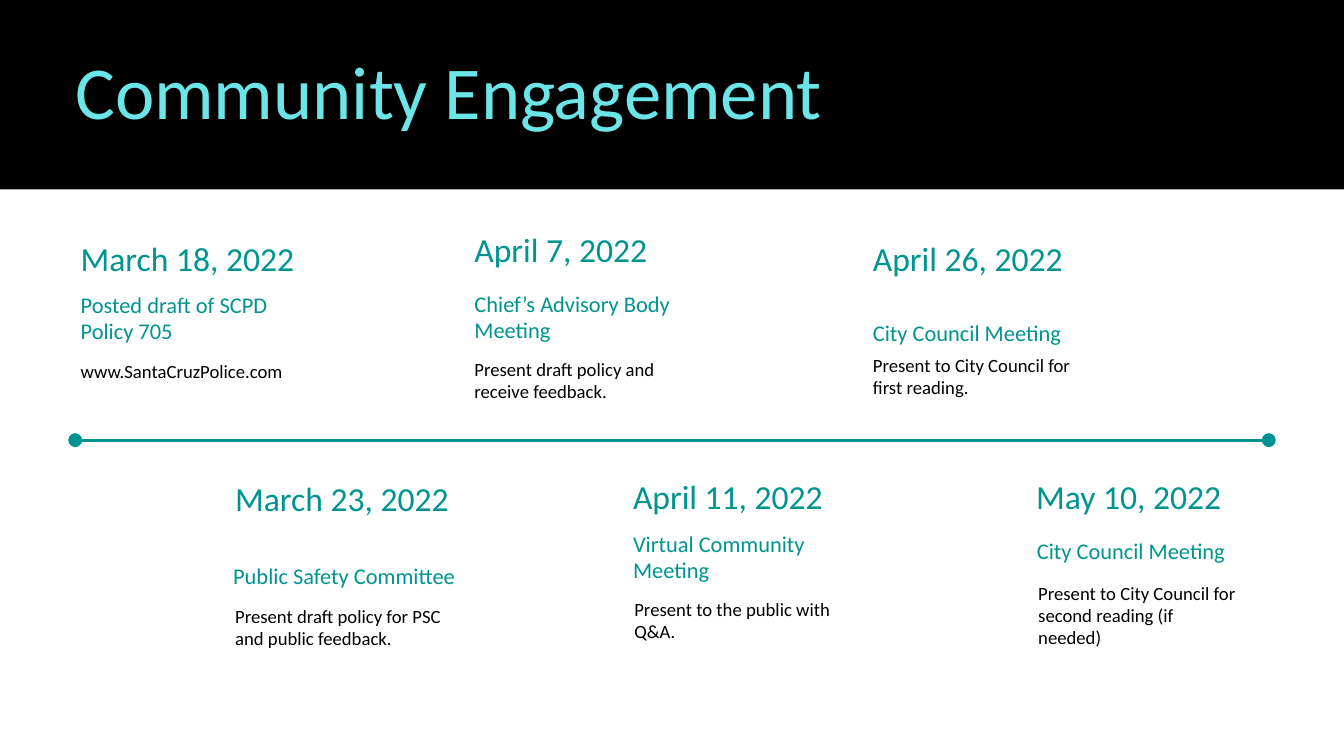
from pptx import Presentation
from pptx.dml.color import RGBColor
from pptx.enum.shapes import MSO_CONNECTOR as Link, MSO_SHAPE as Form
from pptx.enum.text import MSO_AUTO_SIZE as Fit
from pptx.oxml.ns import qn
from pptx.util import Inches, Pt
from lxml.etree import SubElement

THEME = {
    "font": "Calibri",
    "teal": RGBColor.from_string("009490"),
    "aqua": RGBColor.from_string("6CE5E8"),
    "black": RGBColor.from_string("000000"),
    "white": RGBColor.from_string("FFFFFF"),
    "rule": 3,
}
STYLES = {
    "title": (80, 86.4, THEME["aqua"]),
    "date": (36, 38.4, THEME["teal"]),
    "event": (24, 27.6, THEME["teal"]),
    "note": (20, 23.4, THEME["black"]),
}
KINDS = ("date", "event", "note")

TITLE = "Community Engagement"
STOPS = [
    (3.28, [("March 18, 2022", 1.2, 3.6, 1),
            ("Posted draft of SCPD Policy 705", 1.2, 4.35, 2),
            ("www.SantaCruzPolice.com", 1.2, 5.36, 1)]),
    (3.43, [("March 23, 2022", 3.5, 7.18, 1),
            ("Public Safety Committee", 3.47, 8.38, 1),
            ("Present draft policy for PSC and public feedback.", 3.5, 9.01, 2)]),
    (3.28, [("April 7, 2022", 7.06, 3.48, 1),
            ("Chief’s Advisory Body Meeting", 7.06, 4.34, 2),
            ("Present draft policy and receive feedback.", 7.06, 5.33, 2)]),
    (2.97, [("April 11, 2022", 9.42, 7.15, 1),
            ("Virtual Community Meeting", 9.42, 7.91, 2),
            ("Present to the public with Q&A.", 9.44, 8.91, 2)]),
    (2.97, [("April 26, 2022", 12.99, 3.6, 1),
            ("City Council Meeting", 12.99, 4.76, 1),
            ("Present to City Council for first reading.", 12.99, 5.27, 2)]),
    (2.97, [("May 10, 2022", 15.42, 7.15, 1),
            ("City Council Meeting", 15.43, 8.01, 1),
            ("Present to City Council for second reading (if needed)", 15.45, 8.67, 3)]),
]


def add_text(shapes, text, kind, left, top, width, lines=1):
    size, pitch, color = STYLES[kind]
    box = shapes.add_textbox(Inches(left), Inches(top), Inches(width), Pt(pitch * lines))
    frame = box.text_frame
    frame.word_wrap = True
    frame.auto_size = Fit.SHAPE_TO_FIT_TEXT
    frame.margin_left = frame.margin_right = frame.margin_top = frame.margin_bottom = 0
    para = frame.paragraphs[0]
    para.line_spacing = Pt(pitch)
    run = para.add_run()
    run.text = text
    run.font.name = THEME["font"]
    run.font.size = Pt(size)
    run.font.color.rgb = color


def add_axis(shapes, left, right, y):
    axis = shapes.add_connector(Link.STRAIGHT, Inches(left), Inches(y), Inches(right), Inches(y))
    axis.line.color.rgb = THEME["teal"]
    axis.line.width = Pt(THEME["rule"])
    line = axis.line._get_or_add_ln()
    for end in ("a:headEnd", "a:tailEnd"):
        SubElement(line, qn(end), type="oval", w="lg", len="lg")
    SubElement(axis._element.spPr, qn("a:effectLst"))


def add_band(shapes):
    band = shapes.add_shape(Form.RECTANGLE, Inches(-0.14), 0, Inches(20.29), Inches(2.82))
    band.shadow.inherit = False
    band.fill.solid()
    band.fill.fore_color.rgb = THEME["black"]
    band.line.fill.background()


def main():
    deck = Presentation()
    deck.slide_width, deck.slide_height = Inches(20), Inches(11.25)
    slide = deck.slides.add_slide(deck.slide_layouts[6])
    slide.background.fill.solid()
    slide.background.fill.fore_color.rgb = THEME["white"]
    shapes = slide.shapes
    add_axis(shapes, 1.12, 18.88, 6.55)
    add_band(shapes)
    add_text(shapes, TITLE, "title", 1.12, 0.8, 11.9)
    for width, parts in STOPS:
        group = shapes.add_group_shape()
        for kind, (text, left, top, lines) in zip(KINDS, parts):
            add_text(group.shapes, text, kind, left, top, width, lines)
    deck.save("out.pptx")


if __name__ == "__main__":
    main()
